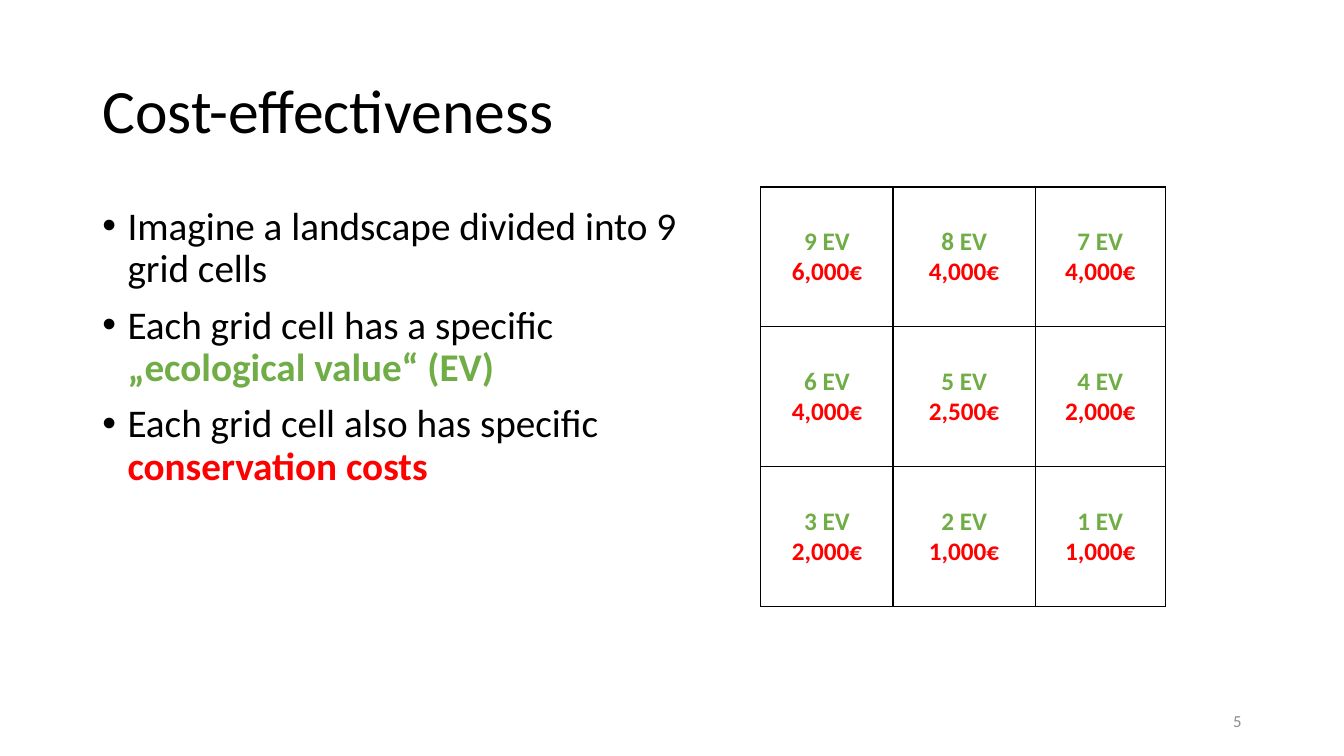
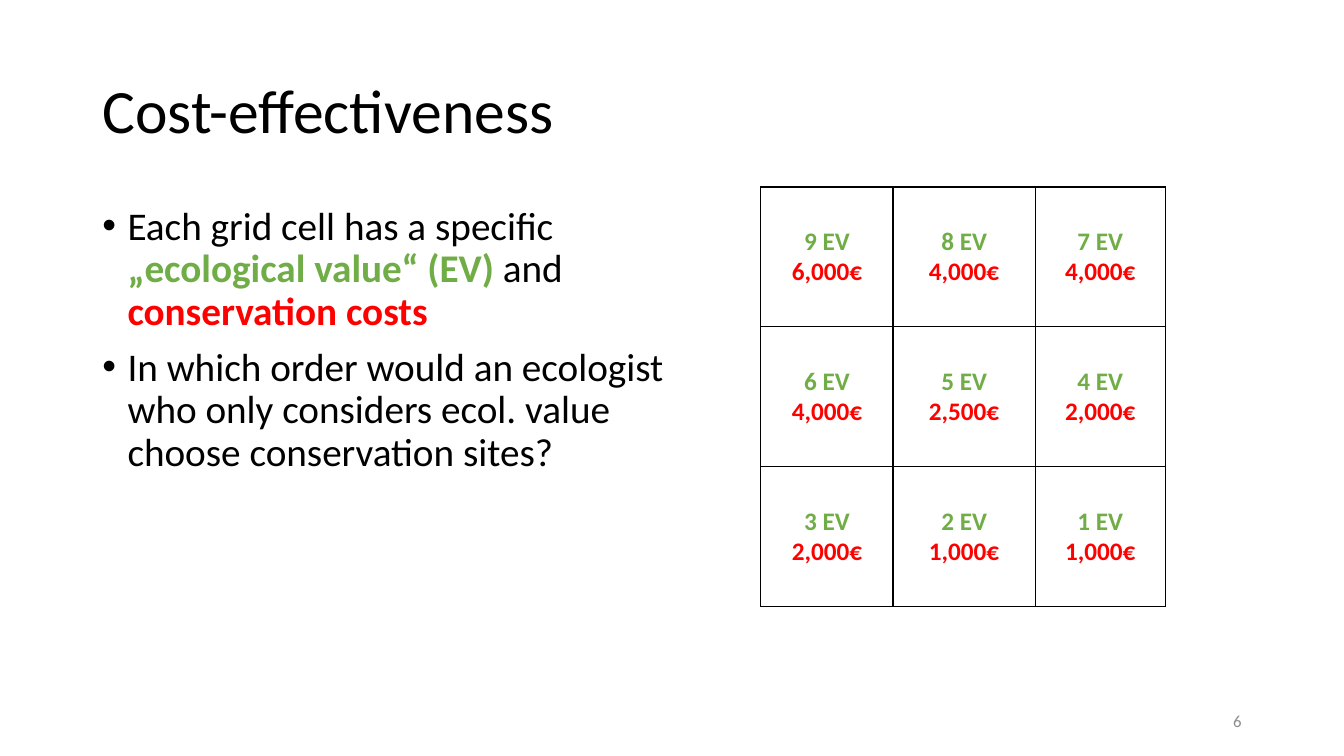
from lxml import etree
from pptx import Presentation
from pptx.dml.color import RGBColor
from pptx.enum import text
from pptx.oxml import ns
from pptx.util import Pt

BLACK = RGBColor(0x00, 0x00, 0x00)
GREEN = RGBColor(0x70, 0xAD, 0x47)
RED = RGBColor(0xFF, 0x00, 0x00)
GREY = RGBColor(0x8C, 0x8C, 0x8C)
FONT = "Calibri"

TITLE_BOX = (66, 29, 828, 104)
BODY_BOX = (66, 144, 447, 343)
GRID_BOX = (543.5, 133.5, 289, 300)
NUMBER_BOX = (678, 500.5, 216, 29)

COLUMN_SHARES = (1.31, 1.41, 1.29)
COSTS = (
    ("6,000€", "4,000€", "4,000€"),
    ("4,000€", "2,500€", "2,000€"),
    ("2,000€", "1,000€", "1,000€"),
)

EV = ("„ecological value“ (EV)", GREEN)
COST = ("conservation costs", RED)
SLIDES = (
    (5, (
        ("Imagine a landscape divided into 9 grid cells",),
        ("Each grid cell has a specific ", EV),
        ("Each grid cell also has specific ", COST),
    )),
    (6, (
        ("Each grid cell has a specific ", EV, " and ", COST),
        ("In which order would an ecologist who only considers ecol. value "
         "choose conservation sites?",),
    )),
)


def style(font, size, color=BLACK, bold=False):
    """Set the typeface, size, colour and weight of a font."""
    font.name, font.size, font.bold = FONT, Pt(size), bold
    font.color.rgb = color


def add_box(s, box):
    """Add a wrapping text box and return its text frame."""
    tf = s.shapes.add_textbox(*map(Pt, box)).text_frame
    tf.word_wrap = True
    return tf


def add_title(s, box, title):
    """Place and format the title placeholder."""
    sp = s.shapes.title
    sp.left, sp.top, sp.width, sp.height = map(Pt, box)
    tf = sp.text_frame
    tf.text = title
    tf.vertical_anchor = text.MSO_ANCHOR.MIDDLE
    p = tf.paragraphs[0]
    p.alignment = text.PP_ALIGN.LEFT
    p.line_spacing = 0.9
    style(p.font, 44)


def add_bullets(s, box, bullets):
    """Write bulleted paragraphs with highlighted phrases."""
    tf = add_box(s, box)
    for i, parts in enumerate(bullets):
        p = tf.add_paragraph() if i else tf.paragraphs[0]
        p.line_spacing = 0.9
        p.space_before = Pt(10)
        style(p.font, 28)
        pPr = p._p.get_or_add_pPr()
        pPr.set("marL", str(Pt(18)))
        pPr.set("indent", str(-Pt(18)))
        font = etree.Element(ns.qn("a:buFont"), typeface="Arial")
        bullet = etree.Element(ns.qn("a:buChar"), char="•")
        defaults = pPr.find(ns.qn("a:defRPr"))
        defaults.addprevious(font)
        defaults.addprevious(bullet)
        for part in parts:
            phrase, color = (part, BLACK) if isinstance(part, str) else part
            r = p.add_run()
            r.text = phrase
            style(r.font, 28, color, color != BLACK)


def add_borders(cell):
    """Draw a thin black line on every side of a cell."""
    tcPr = cell._tc.get_or_add_tcPr()
    for side in ("lnL", "lnR", "lnT", "lnB"):
        ln = etree.SubElement(tcPr, ns.qn("a:" + side), w=str(Pt(1)))
        fill = etree.SubElement(ln, ns.qn("a:solidFill"))
        etree.SubElement(fill, ns.qn("a:srgbClr"), val=str(BLACK))


def add_cost_grid(s, box, costs):
    """Add the landscape grid, its ecological values falling from 9 to 1."""
    n = len(costs)
    table = s.shapes.add_table(n, n, *map(Pt, box)).table
    table.first_row = table.horz_banding = False
    for column, share in zip(table.columns, COLUMN_SHARES):
        column.width = Pt(box[2] * share / sum(COLUMN_SHARES))
    for i, row in enumerate(costs):
        table.rows[i].height = Pt(box[3] / n)
        for j, cost in enumerate(row):
            cell = table.cell(i, j)
            add_borders(cell)
            cell.fill.background()
            cell.vertical_anchor = text.MSO_ANCHOR.MIDDLE
            tf = cell.text_frame
            tf.text = f"{n * n - n * i - j} EV\n{cost}"
            for p, color in zip(tf.paragraphs, (GREEN, RED)):
                p.alignment = text.PP_ALIGN.CENTER
                for r in p.runs:
                    style(r.font, 18, color, True)


def add_number(s, box, number):
    """Write the slide number at the right of its box."""
    tf = add_box(s, box)
    tf.vertical_anchor = text.MSO_ANCHOR.MIDDLE
    p = tf.paragraphs[0]
    p.alignment = text.PP_ALIGN.RIGHT
    r = p.add_run()
    r.text = str(number)
    style(r.font, 12, GREY)


def add_grid_slide(prs, number, bullets):
    """Add a slide with bullets on the left and the grid on the right."""
    s = prs.slides.add_slide(prs.slide_layouts[5])
    add_title(s, TITLE_BOX, "Cost-effectiveness")
    add_cost_grid(s, GRID_BOX, COSTS)
    add_bullets(s, BODY_BOX, bullets)
    add_number(s, NUMBER_BOX, number)


def main():
    """Build and save the presentation."""
    prs = Presentation()
    prs.slide_width, prs.slide_height = Pt(960), Pt(540)
    for number, bullets in SLIDES:
        add_grid_slide(prs, number, bullets)
    prs.save("out.pptx")


if __name__ == "__main__":
    main()
